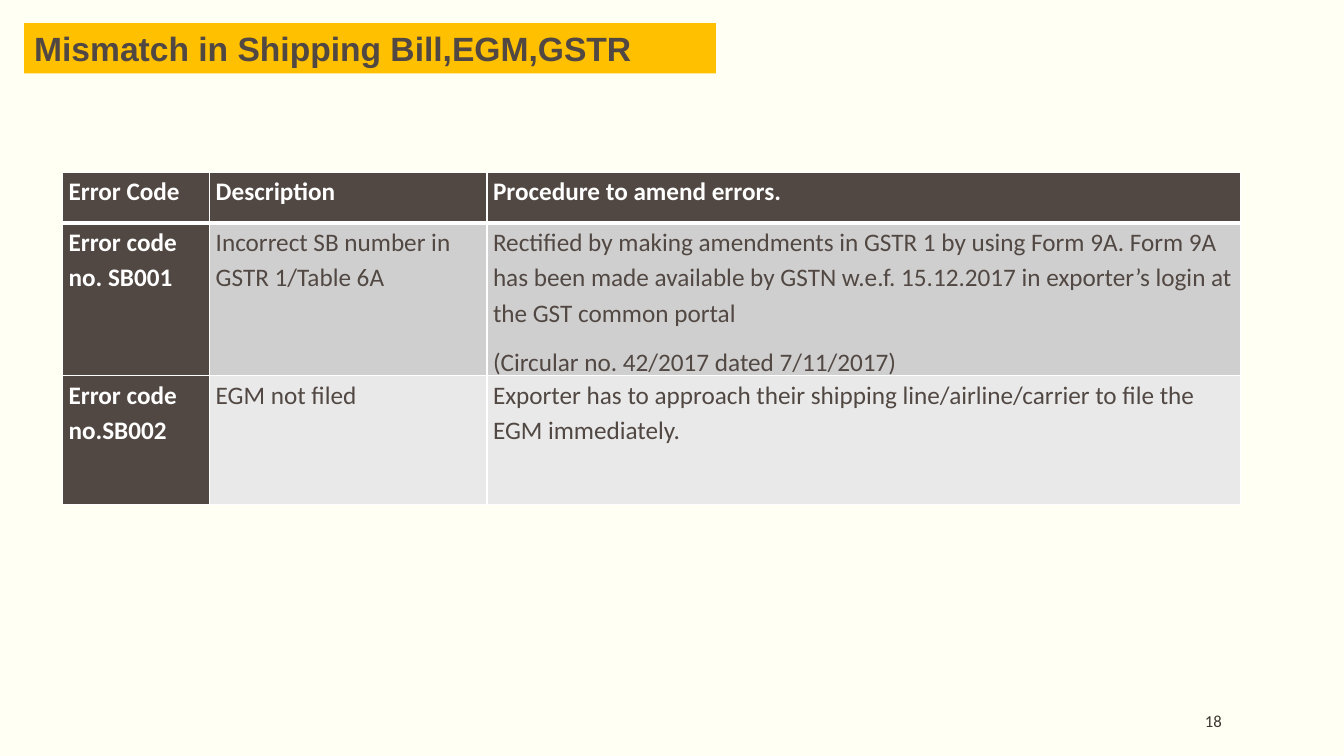
from dataclasses import dataclass

from lxml.etree import SubElement
from pptx import Presentation
from pptx.dml.color import RGBColor
from pptx.enum.shapes import MSO_SHAPE as Shape
from pptx.enum.text import MSO_ANCHOR as Anchor, PP_ALIGN as Align
from pptx.oxml.ns import qn
from pptx.slide import Slide
from pptx.table import _Cell as Cell
from pptx.text.text import _Paragraph as Paragraph
from pptx.util import Emu, Inches, Pt

PAGE_WIDTH, PAGE_HEIGHT = Inches(13.33), Inches(7.5)
COLORS = {
    "page": "FFFFF3",
    "title": "FFC000",
    "ink": "514843",
    "number": "3D3632",
    "white": "FFFFFF",
    "odd": "D0CFCF",
    "even": "E9E9E9",
}
COLUMN_WIDTHS = [1.46, 2.75, 7.47]
ROW_HEIGHTS = [0.5, 1.35, 1.28]


@dataclass(frozen=True)
class Area:
    """A rectangle in shares of the slide's width and height."""
    left: float
    top: float
    width: float
    height: float

    def lengths(self) -> tuple[Emu, Emu, Emu, Emu]:
        return (Emu(round(self.left * PAGE_WIDTH)), Emu(round(self.top * PAGE_HEIGHT)),
                Emu(round(self.width * PAGE_WIDTH)), Emu(round(self.height * PAGE_HEIGHT)))


@dataclass(frozen=True)
class ErrorRow:
    code: str
    description: str
    procedure: str

    def texts(self) -> list[str]:
        return [self.code, self.description, self.procedure]


TITLE_AREA = Area(0.24 / 13.33, 0.23 / 7.5, 6.86 / 13.33, 0.5 / 7.5)
TABLE_AREA = Area(0.62 / 13.33, 1.71 / 7.5, 11.68 / 13.33, 3.13 / 7.5)
NUMBER_AREA = Area(10.12 / 13.33, 6.95 / 7.5, 2 / 13.33, 0.4 / 7.5)

ROWS = [
    ErrorRow("Error Code", "Description", "Procedure to amend errors."),
    ErrorRow("Error code no. SB001", "Incorrect SB number in GSTR 1/Table 6A",
             "Rectified by making amendments in GSTR 1 by using Form 9A. Form 9A has been "
             "made available by GSTN w.e.f. 15.12.2017 in exporter’s login at the GST "
             "common portal\n(Circular no. 42/2017 dated 7/11/2017)"),
    ErrorRow("Error code no.SB002", "EGM not filed",
             "Exporter has to approach their shipping line/airline/carrier to file the "
             "EGM immediately."),
]


def color(name: str) -> RGBColor:
    return RGBColor.from_string(COLORS[name])


def set_font(para: Paragraph, face: str, size: int, ink: str, bold: bool = False) -> None:
    para.font.name = face
    para.font.size = Pt(size)
    para.font.color.rgb = color(ink)
    para.font.bold = bold


def set_borders(cell: Cell, row: int) -> None:
    """Draw white rules, with a thicker one between the header and the body."""
    widths = {"L": 1, "R": 1, "T": 3 if row == 1 else 1, "B": 3 if row == 0 else 1}
    properties = cell._tc.get_or_add_tcPr()
    for side, width in widths.items():
        line = SubElement(properties, qn(f"a:ln{side}"), w=str(Pt(width)))
        fill = SubElement(line, qn("a:solidFill"))
        SubElement(fill, qn("a:srgbClr"), val=COLORS["white"])


def fill_cell(cell: Cell, text: str, row: int, column: int) -> None:
    heading = row == 0 or column == 0
    set_borders(cell, row)
    cell.fill.solid()
    cell.fill.fore_color.rgb = color("ink" if heading else "odd" if row % 2 else "even")
    cell.margin_left = cell.margin_right = Inches(0.06)
    cell.margin_top = cell.margin_bottom = 0
    cell.text_frame.text = text
    for para in cell.text_frame.paragraphs:
        para.line_spacing = 1.15
        para.space_after = Pt(10)
        set_font(para, "Calibri", 18, "white" if heading else "ink", heading)


def add_title(page: Slide) -> None:
    box = page.shapes.add_shape(Shape.RECTANGLE, *TITLE_AREA.lengths())
    box.shadow.inherit = False
    box.fill.solid()
    box.fill.fore_color.rgb = color("title")
    box.line.fill.background()
    frame = box.text_frame
    frame.word_wrap = True
    frame.vertical_anchor = Anchor.TOP
    para = frame.paragraphs[0]
    para.text = "Mismatch in Shipping Bill,EGM,GSTR"
    para.alignment = Align.LEFT
    set_font(para, "Arial", 24, "ink", True)


def add_error_table(page: Slide) -> None:
    table = page.shapes.add_table(
        len(ROWS), len(COLUMN_WIDTHS), *TABLE_AREA.lengths()).table
    table.first_col = True
    for column, width in zip(table.columns, COLUMN_WIDTHS):
        column.width = Inches(width)
    for row, height in zip(table.rows, ROW_HEIGHTS):
        row.height = Inches(height)
    for row, entry in enumerate(ROWS):
        for column, text in enumerate(entry.texts()):
            fill_cell(table.cell(row, column), text, row, column)


def add_page_number(page: Slide) -> None:
    frame = page.shapes.add_textbox(*NUMBER_AREA.lengths()).text_frame
    frame.word_wrap = True
    frame.vertical_anchor = Anchor.MIDDLE
    frame.margin_left = frame.margin_right = 0
    para = frame.paragraphs[0]
    para.text = "18"
    para.alignment = Align.RIGHT
    set_font(para, "Calibri", 12, "number")


def main() -> None:
    deck = Presentation()
    deck.slide_width, deck.slide_height = PAGE_WIDTH, PAGE_HEIGHT
    page = deck.slides.add_slide(deck.slide_layouts[6])
    page.background.fill.solid()
    page.background.fill.fore_color.rgb = color("page")
    add_page_number(page)
    add_title(page)
    add_error_table(page)
    deck.save("out.pptx")


if __name__ == "__main__":
    main()
